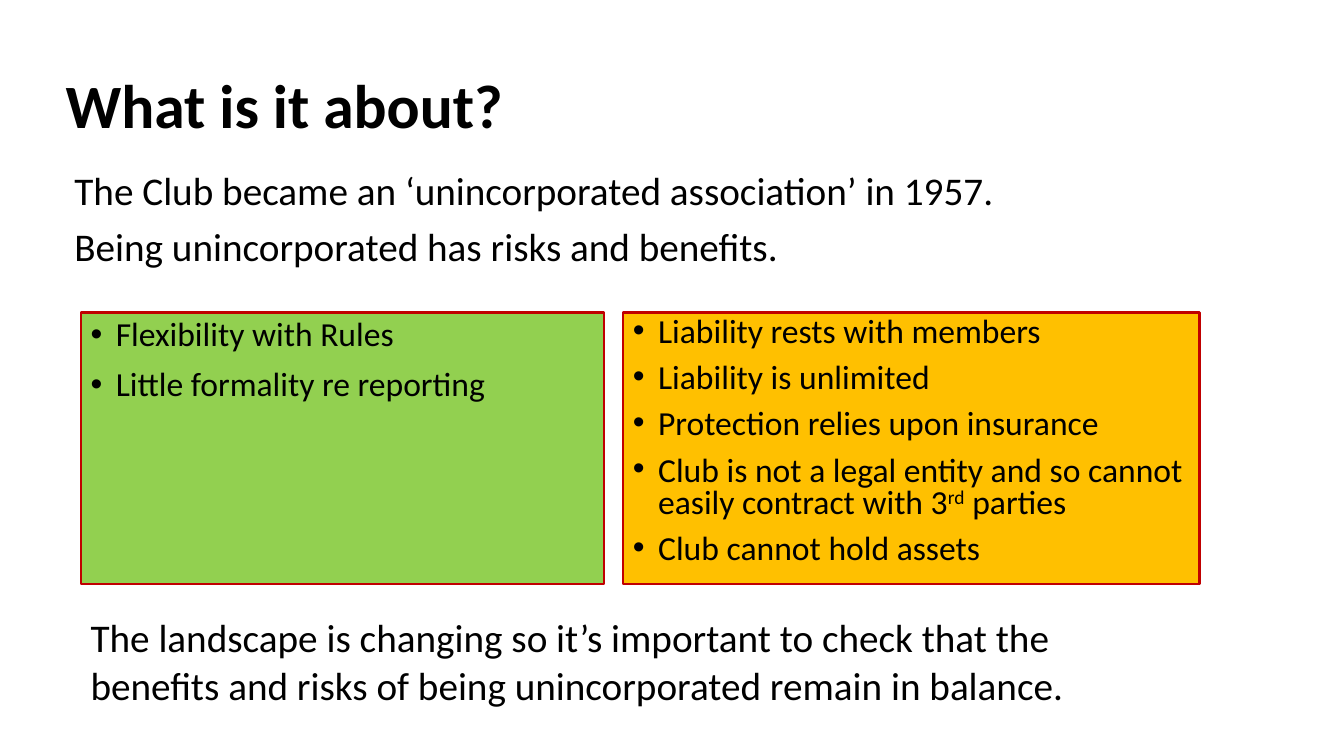
from dataclasses import dataclass

from lxml.etree import SubElement
from pptx import Presentation
from pptx.dml.color import RGBColor
from pptx.enum.shapes import MSO_SHAPE
from pptx.enum.text import MSO_ANCHOR, MSO_AUTO_SIZE, PP_ALIGN
from pptx.oxml.ns import qn
from pptx.util import Pt

BLACK = RGBColor(0x00, 0x00, 0x00)
GREEN = RGBColor(0x92, 0xD0, 0x50)
AMBER = RGBColor(0xFF, 0xC0, 0x00)
RED = RGBColor(0xC0, 0x00, 0x00)
FONT = "Calibri"
SUPERSCRIPT = "^"  # leading mark of a superscript run
BULLET_INDENT = 18
PANEL_TOP, PANEL_HEIGHT = 223.2, 193.7


@dataclass
class TextStyle:
    size: float
    line_spacing: float = 0.9
    space_before: float = 10
    bold: bool = False
    bullet: bool = False


@dataclass
class Panel:
    left: float
    width: float
    fill: RGBColor
    style: TextStyle
    items: list[list[str]]


@dataclass
class Passage:
    left: float
    top: float
    width: float
    height: float
    style: TextStyle
    lines: list[list[str]]


PANELS = [
    Panel(57.6, 373.7, GREEN, TextStyle(24, bullet=True), [
        ["Flexibility with Rules"],
        ["Little formality re reporting"],
    ]),
    Panel(445, 411.8, AMBER, TextStyle(24, line_spacing=0.8, bullet=True), [
        ["Liability rests with members"],
        ["Liability is unlimited"],
        ["Protection relies upon insurance"],
        ["Club is not a legal entity and so cannot easily contract with 3",
         "^rd", " parties"],
        ["Club cannot hold assets"],
    ]),
]

PASSAGES = [
    Passage(46.1, 118.8, 828, 90, TextStyle(28), [
        ["The Club became an ‘unincorporated association’ in 1957."],
        ["Being unincorporated has risks and benefits."],
    ]),
    Passage(57.6, 434.9, 805, 75, TextStyle(28, 1.0, 0), [
        ["The landscape is changing so it’s important to check that the"],
        ["benefits and risks of being unincorporated remain in balance."],
    ]),
]


def add_bullet(p) -> None:
    pPr = p._p.get_or_add_pPr()
    pPr.set("marL", str(Pt(BULLET_INDENT)))
    pPr.set("indent", str(-Pt(BULLET_INDENT)))
    SubElement(pPr, qn("a:buFont")).set("typeface", "Arial")
    SubElement(pPr, qn("a:buChar")).set("char", "•")


def write(tf, paragraphs: list[list[str]], style: TextStyle,
          anchor: MSO_ANCHOR = MSO_ANCHOR.TOP) -> None:
    tf.word_wrap = True
    tf.auto_size = MSO_AUTO_SIZE.NONE
    tf.vertical_anchor = anchor
    for i, runs in enumerate(paragraphs):
        p = tf.add_paragraph() if i else tf.paragraphs[0]
        p.alignment = PP_ALIGN.LEFT
        p.line_spacing = style.line_spacing
        p.space_before = Pt(style.space_before if i else 0)
        if style.bullet:
            add_bullet(p)
        for text in runs:
            r = p.add_run()
            r.text = text.removeprefix(SUPERSCRIPT)
            r.font.name = FONT
            r.font.size = Pt(style.size)
            r.font.bold = style.bold
            r.font.color.rgb = BLACK
            if text.startswith(SUPERSCRIPT):
                r._r.get_or_add_rPr().set("baseline", "30000")


def add_panel(s, panel: Panel) -> None:
    sp = s.shapes.add_shape(MSO_SHAPE.RECTANGLE, Pt(panel.left), Pt(PANEL_TOP),
                            Pt(panel.width), Pt(PANEL_HEIGHT))
    sp.shadow.inherit = False
    sp.fill.solid()
    sp.fill.fore_color.rgb = panel.fill
    sp.line.color.rgb = RED
    sp.line.width = Pt(1.5)
    write(sp.text_frame, panel.items, panel.style)


def add_passage(s, passage: Passage) -> None:
    sp = s.shapes.add_textbox(Pt(passage.left), Pt(passage.top),
                              Pt(passage.width), Pt(passage.height))
    write(sp.text_frame, passage.lines, passage.style)


def main() -> None:
    prs = Presentation()
    prs.slide_width, prs.slide_height = Pt(960), Pt(540)
    s = prs.slides.add_slide(prs.slide_layouts[5])

    # Title
    title = s.shapes.title
    title.left, title.top = Pt(39.6), Pt(25.2)
    title.width, title.height = Pt(584.6), Pt(104.4)
    write(title.text_frame, [["What is it about?"]],
          TextStyle(44, bold=True), MSO_ANCHOR.MIDDLE)

    # Introduction and conclusion
    for passage in PASSAGES:
        add_passage(s, passage)

    # Benefits and risks
    for panel in PANELS:
        add_panel(s, panel)

    prs.save("out.pptx")


if __name__ == "__main__":
    main()
